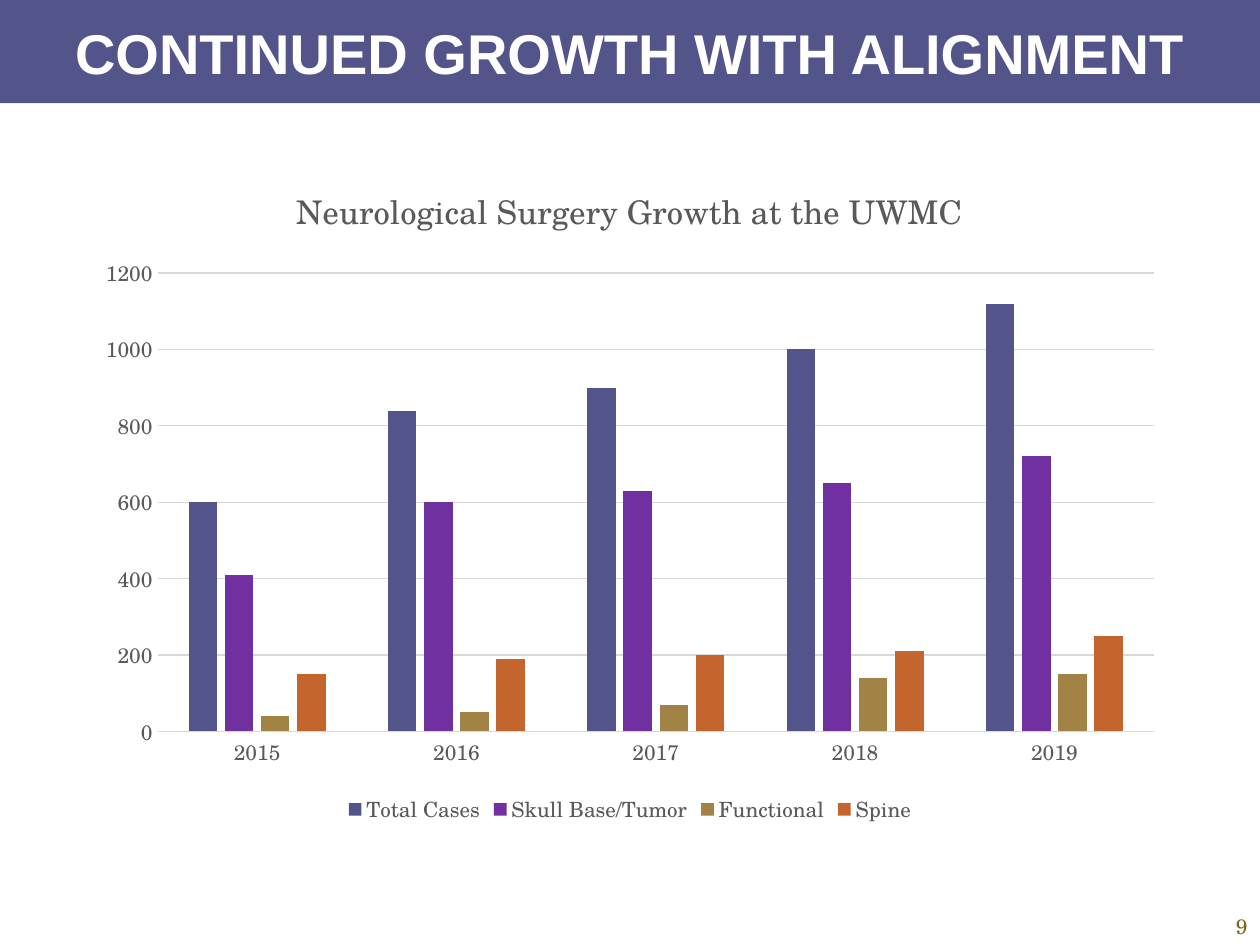
from dataclasses import dataclass

from pptx import Presentation
from pptx.chart.data import CategoryChartData
from pptx.dml.color import RGBColor
from pptx.enum.chart import XL_CHART_TYPE, XL_LEGEND_POSITION, XL_TICK_MARK
from pptx.enum.shapes import MSO_SHAPE
from pptx.enum.text import MSO_ANCHOR, PP_ALIGN
from pptx.util import Pt

COLUMNS = XL_CHART_TYPE.COLUMN_CLUSTERED
LEGEND_BOTTOM = XL_LEGEND_POSITION.BOTTOM
NO_TICKS = XL_TICK_MARK.NONE
RECTANGLE = MSO_SHAPE.RECTANGLE
MIDDLE, BOTTOM = MSO_ANCHOR.MIDDLE, MSO_ANCHOR.BOTTOM
CENTER, RIGHT = PP_ALIGN.CENTER, PP_ALIGN.RIGHT

TITLE = "CONTINUED GROWTH WITH ALIGNMENT"
PAGE_NUMBER = "9"
CHART_TITLE = "Neurological Surgery Growth at the UWMC"
YEARS = ["2015", "2016", "2017", "2018", "2019"]
SERIES = [
    ("Total Cases", (600, 840, 900, 1000, 1120), "53548A"),
    ("Skull Base/Tumor", (410, 600, 630, 650, 720), "7030A0"),
    ("Functional", (40, 50, 70, 140, 150), "A18346"),
    ("Spine", (150, 190, 200, 210, 250), "C4652D"),
]

SLIDE_WIDTH, SLIDE_HEIGHT = 720, 540
BANNER_HEIGHT = 59
TITLE_MARGIN = 36
CHART_WIDTH, CHART_HEIGHT, CHART_TOP = 624, 384, 90
NUMBER_WIDTH, NUMBER_HEIGHT = 54, 18.5


@dataclass(frozen=True)
class Theme:
    heading_font: str = "Arial"
    body_font: str = "TeX Gyre Schola"
    banner: str = "53548A"
    title: str = "FFFFFF"
    chart_text: str = "595959"
    grid: str = "D9D9D9"
    number: str = "7C6316"
    title_size: float = 32
    chart_title_size: float = 18.6
    body_size: float = 12
    line_width: float = 0.75


THEME = Theme()


def style_font(font, name, size, color, bold=False):
    font.name = name
    font.size = Pt(size)
    font.bold = bold
    font.color.rgb = RGBColor.from_string(color)


def style_line(line):
    line.color.rgb = RGBColor.from_string(THEME.grid)
    line.width = Pt(THEME.line_width)


def add_text(slide, text, box, margins, anchor, alignment, font_style):
    frame = slide.shapes.add_textbox(*map(Pt, box)).text_frame
    frame.word_wrap = True
    frame.margin_left, frame.margin_top, frame.margin_right, frame.margin_bottom = map(Pt, margins)
    frame.vertical_anchor = anchor
    frame.text = text
    paragraph = frame.paragraphs[0]
    paragraph.alignment = alignment
    style_font(paragraph.runs[0].font, *font_style)


def add_banner(slide):
    banner = slide.shapes.add_shape(RECTANGLE, 0, 0, Pt(SLIDE_WIDTH), Pt(BANNER_HEIGHT))
    banner.shadow.inherit = False
    banner.fill.solid()
    banner.fill.fore_color.rgb = RGBColor.from_string(THEME.banner)
    banner.line.fill.background()


def add_growth_chart(slide):
    data = CategoryChartData()
    data.categories = YEARS
    for name, values, _ in SERIES:
        data.add_series(name, values)
    left = (SLIDE_WIDTH - CHART_WIDTH) / 2
    box = (left, CHART_TOP, CHART_WIDTH, CHART_HEIGHT)
    chart = slide.shapes.add_chart(COLUMNS, *map(Pt, box), data).chart
    body_style = (THEME.body_font, THEME.body_size, THEME.chart_text)
    style_font(chart.font, *body_style)

    chart.has_title = True
    chart.chart_title.include_in_layout = False
    title_frame = chart.chart_title.text_frame
    title_frame.text = CHART_TITLE
    style_font(title_frame.paragraphs[0].runs[0].font,
               THEME.body_font, THEME.chart_title_size, THEME.chart_text)

    chart.has_legend = True
    chart.legend.position = LEGEND_BOTTOM
    chart.legend.include_in_layout = False
    style_font(chart.legend.font, *body_style)

    for axis in (chart.category_axis, chart.value_axis):
        axis.major_tick_mark = axis.minor_tick_mark = NO_TICKS
        style_font(axis.tick_labels.font, *body_style)
    style_line(chart.category_axis.format.line)
    value_axis = chart.value_axis
    value_axis.minimum_scale, value_axis.maximum_scale, value_axis.major_unit = 0, 1200, 200
    value_axis.format.line.fill.background()
    style_line(value_axis.major_gridlines.format.line)

    plot = chart.plots[0]
    plot.gap_width = 219
    plot.overlap = -27
    plot.vary_by_categories = False
    for series, (_, _, color) in zip(plot.series, SERIES):
        series.format.fill.solid()
        series.format.fill.fore_color.rgb = RGBColor.from_string(color)


def main():
    presentation = Presentation()
    presentation.slide_width = Pt(SLIDE_WIDTH)
    presentation.slide_height = Pt(SLIDE_HEIGHT)
    slide = presentation.slides.add_slide(presentation.slide_layouts[6])
    add_banner(slide)
    add_growth_chart(slide)
    add_text(slide, TITLE,
             (TITLE_MARGIN, 0, SLIDE_WIDTH - 2 * TITLE_MARGIN, BANNER_HEIGHT + 1),
             (0, 0, 0, 0), MIDDLE, CENTER,
             (THEME.heading_font, THEME.title_size, THEME.title, True))
    add_text(slide, PAGE_NUMBER,
             (SLIDE_WIDTH - NUMBER_WIDTH, SLIDE_HEIGHT - NUMBER_HEIGHT, NUMBER_WIDTH, NUMBER_HEIGHT),
             (0, 0, 7.2, 3.6), BOTTOM, RIGHT,
             (THEME.body_font, THEME.body_size, THEME.number))
    presentation.save("out.pptx")


if __name__ == "__main__":
    main()
